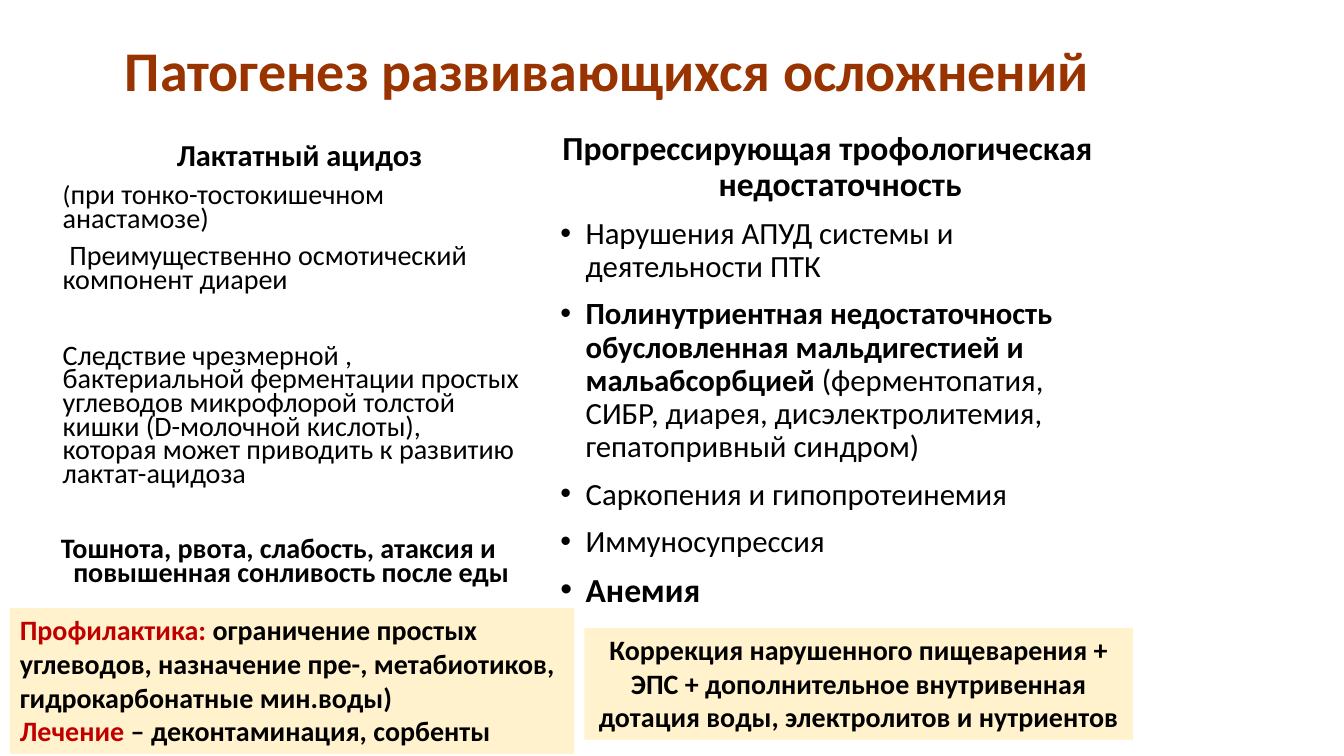
from pptx import Presentation
from pptx.dml.color import RGBColor
from pptx.enum.shapes import MSO_SHAPE as Shape
from pptx.enum.text import MSO_ANCHOR as Anchor, PP_ALIGN as Align
from pptx.oxml.xmlchemy import OxmlElement
from pptx.util import Cm, Pt

COLORS = {"title": "993300", "text": "000000", "accent": "C00000", "note": "FFF2CC"}
FONT = "Calibri"
HANG = 0.64


def add_span(para, text, size, bold=False, color="text"):
    """Append one formatted run to a paragraph."""
    span = para.add_run()
    span.text = text
    span.font.name = FONT
    span.font.size = Pt(size)
    span.font.bold = bold
    span.font.color.rgb = RGBColor.from_string(COLORS[color])


def add_para(frame, spans, align=Align.LEFT, spacing=1.0, before=0):
    """Add a paragraph of spans, filling the empty first one when present."""
    first = frame.paragraphs[0]
    para = frame.add_paragraph() if first.runs else first
    para.alignment = align
    para.line_spacing = spacing
    para.space_before = Pt(before)
    for span in spans:
        add_span(para, *span)
    return para


def set_indent(para, margin, first=0, bullet=False):
    """Set the left margin and first-line indent, with an optional bullet."""
    properties = para._p.get_or_add_pPr()
    properties.set("marL", str(Cm(margin)))
    properties.set("indent", str(Cm(first)))
    if bullet:
        font = OxmlElement("a:buFont")
        font.set("typeface", "Arial")
        mark = OxmlElement("a:buChar")
        mark.set("char", "•")
        properties.extend([font, mark])


def add_text(page, box, anchor=Anchor.TOP):
    """Add a wrapping text box and return its text frame."""
    frame = page.shapes.add_textbox(*map(Cm, box)).text_frame
    frame.word_wrap = True
    frame.vertical_anchor = anchor
    return frame


def add_title(page, box, text):
    """Place the centred slide title."""
    frame = add_text(page, box, Anchor.MIDDLE)
    add_para(frame, [(text, 40, True, "title")], Align.CENTER, 0.9)


def add_acidosis(page, box):
    """Place the column on lactic acidosis."""
    frame = add_text(page, box)
    rows = [
        ([("Лактатный ацидоз", 21.7, True)], Align.CENTER, 10, 1.07, 0),
        ([("(", 18.6), ("при тонко-тостокишечном анастамозе)", 20.1)],
         Align.LEFT, 10, HANG, 0),
        ([("Преимущественно осмотический компонент диареи", 20.1)],
         Align.LEFT, 10, HANG, 0.17),
        ([("Следствие чрезмерной , бактериальной ферментации простых углеводов "
           "микрофлорой толстой кишки (D-молочной кислоты), которая может "
           "приводить к развитию лактат-ацидоза", 20.1)], Align.LEFT, 37, HANG, 0),
        ([("Тошнота, рвота, слабость, атаксия и повышенная сонливость после еды",
           20.1, True)], Align.CENTER, 37, HANG, -HANG),
    ]
    for spans, align, before, margin, first in rows:
        set_indent(add_para(frame, spans, align, 0.7, before), margin, first)


def add_deficiency(page, box):
    """Place the bulleted column on trophological deficiency."""
    frame = add_text(page, box)
    heading = [("Прогрессирующая трофологическая недостаточность", 24, True)]
    set_indent(add_para(frame, heading, Align.CENTER, 0.9, 10), HANG, -HANG)
    bullets = [
        [("Нарушения АПУД системы и деятельности ПТК", 22)],
        [("Полинутриентная недостаточность обусловленная мальдигестией и "
          "мальабсорбцией ", 22, True),
         ("(ферментопатия, СИБР, диарея, дисэлектролитемия, "
          "гепатопривный синдром)", 22)],
        [("Саркопения и гипопротеинемия", 22)],
        [("Иммуносупрессия", 22)],
        [("Анемия", 24, True)],
    ]
    for spans in bullets:
        para = add_para(frame, spans, spacing=0.9, before=10)
        set_indent(para, HANG, -HANG, bullet=True)


def add_note(page, box, rows, align):
    """Place a filled note with bold text."""
    note = page.shapes.add_shape(Shape.RECTANGLE, *map(Cm, box))
    note.shadow.inherit = False
    note.fill.solid()
    note.fill.fore_color.rgb = RGBColor.from_string(COLORS["note"])
    note.line.fill.background()
    note.text_frame.word_wrap = True
    note.text_frame.vertical_anchor = Anchor.TOP
    for row in rows:
        spans = [(text, 20, True, color) for text, color in row]
        add_para(note.text_frame, spans, align)


def main():
    """Build and save the deck."""
    deck = Presentation()
    deck.slide_width, deck.slide_height = Cm(33.87), Cm(19.05)
    page = deck.slides.add_slide(deck.slide_layouts[6])
    add_title(page, (0.69, 0, 29.21, 3.68), "Патогенез развивающихся осложнений")
    add_acidosis(page, (0.69, 3.56, 12.65, 11.89))
    add_deficiency(page, (13.87, 3.18, 13.97, 12.67))
    add_note(page, (0.25, 15.32, 14.22, 3.68), [
        [("Профилактика: ", "accent"),
         ("ограничение простых углеводов, назначение пре-, метабиотиков, "
          "гидрокарбонатные мин.воды)", "text")],
        [("Лечение ", "accent"), ("– деконтаминация, сорбенты", "text")],
    ], Align.LEFT)
    add_note(page, (14.73, 15.82, 13.82, 2.82), [
        [("Коррекция нарушенного пищеварения + ЭПС + дополнительное "
          "внутривенная дотация воды, электролитов и нутриентов", "text")],
    ], Align.CENTER)
    deck.save("out.pptx")


if __name__ == "__main__":
    main()
